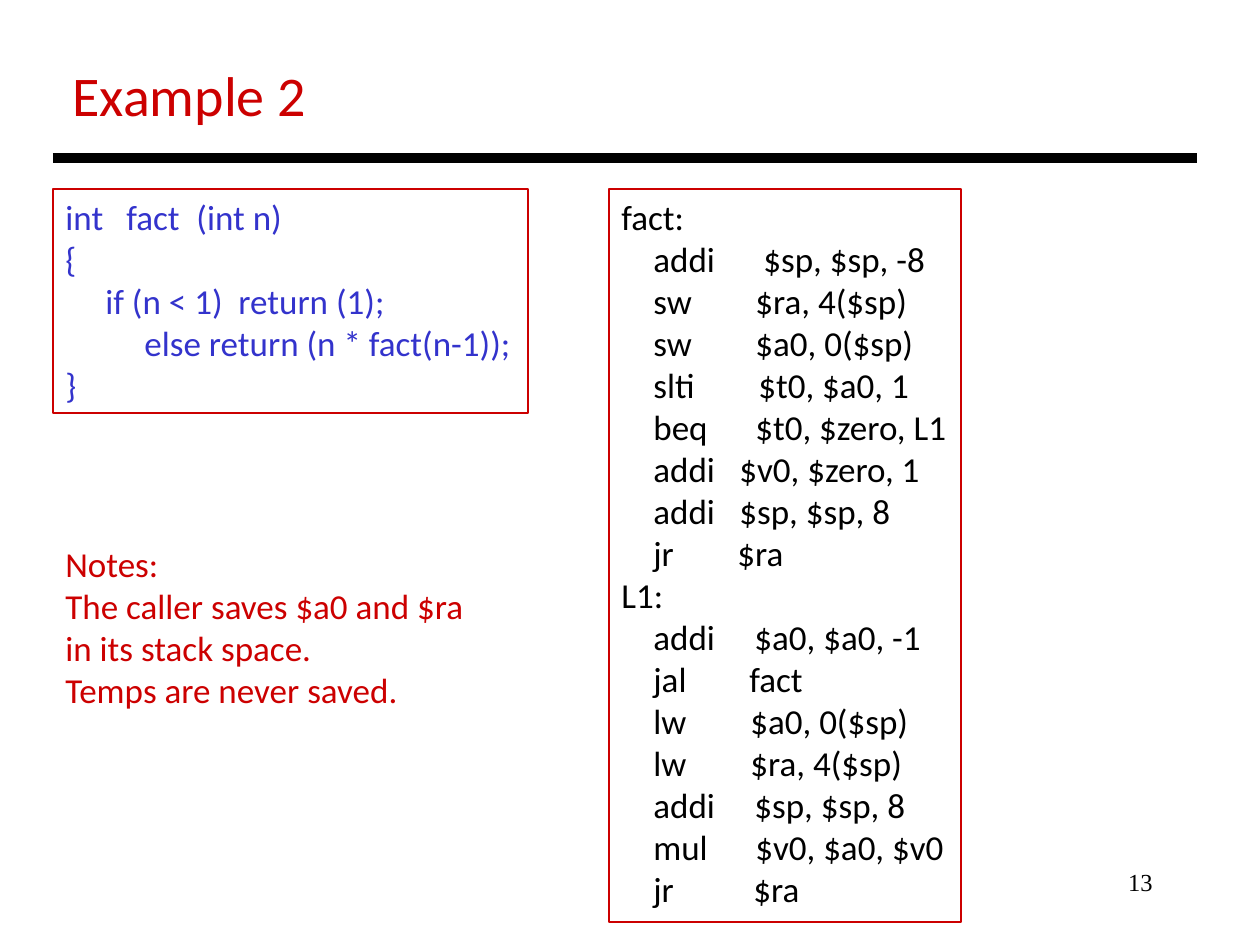
from lxml import etree
from pptx import Presentation
from pptx.dml.color import RGBColor
from pptx.enum.shapes import MSO_CONNECTOR, MSO_SHAPE
from pptx.enum.text import MSO_ANCHOR, PP_ALIGN
from pptx.oxml.ns import qn
from pptx.util import Pt

PX = 914400 / 126
RED = RGBColor(0xCC, 0x00, 0x00)
BLUE = RGBColor(0x33, 0x33, 0xCC)
BLACK = RGBColor(0x00, 0x00, 0x00)
LEFT, RIGHT = PP_ALIGN.LEFT, PP_ALIGN.RIGHT
TOP = MSO_ANCHOR.TOP
RECT = MSO_SHAPE.RECTANGLE
LINE = MSO_CONNECTOR.STRAIGHT

BODY = {"name": "Calibri", "size": Pt(20)}
HEAD = {"name": "Calibri", "size": Pt(32)}
FOOT = {"name": "Times New Roman", "size": Pt(14)}

# Each row: text, then its tab stops in px
SOURCE = [
    ("int\tfact\t(int n)", 61, 131),
    ("{",),
    ("\tif (n < 1)\treturn (1);", 40, 173),
    ("\telse return (n * fact(n-1));", 79),
    ("}",),
]
NOTES = [
    ("Notes:",),
    ("The caller saves $a0 and $ra",),
    ("in its stack space.",),
    ("Temps are never saved.",),
]
# Each step: operation, operands, px from text edge to operands
ENTRY = [
    ("addi", "$sp, $sp, -8", 142),
    ("sw", "$ra, 4($sp)", 134),
    ("sw", "$a0, 0($sp)", 134),
    ("slti", "$t0, $a0, 1", 137),
    ("beq", "$t0, $zero, L1", 134),
    ("addi", "$v0, $zero, 1", 118),
    ("addi", "$sp, $sp, 8", 118),
    ("jr", "$ra", 116),
]
CALL = [
    ("addi", "$a0, $a0, -1", 133),
    ("jal", "fact", 128),
    ("lw", "$a0, 0($sp)", 129),
    ("lw", "$ra, 4($sp)", 129),
    ("addi", "$sp, $sp, 8", 133),
    ("mul", "$v0, $a0, $v0", 134),
    ("jr", "$ra", 132),
]


def emu(*vals):
    return [round(v * PX) for v in vals]


def set_tabs(para, stops):
    if stops:
        tabs = etree.SubElement(para._p.get_or_add_pPr(), qn("a:tabLst"))
        for pos in emu(*stops):
            etree.SubElement(tabs, qn("a:tab"), pos=str(pos), algn="l")


def fill_text(shape, rows, font, color, align=LEFT):
    frame = shape.text_frame
    form = {"word_wrap": True, "vertical_anchor": TOP, "margin_right": 0}
    if align == RIGHT:
        del form["margin_right"]
    for key, val in form.items():
        setattr(frame, key, val)
    for i, (text, *stops) in enumerate(rows):
        para = frame.add_paragraph() if i else frame.paragraphs[0]
        para.alignment = align
        set_tabs(para, stops)
        run = para.add_run()
        run.text = text
        for key, val in font.items():
            setattr(run.font, key, val)
        run.font.color.rgb = color


def add_label(slide, box, rows, font, color, align=LEFT):
    shape = slide.shapes.add_textbox(*emu(*box))
    fill_text(shape, rows, font, color, align)


def add_panel(slide, box, rows, color):
    """Outlined box of code."""
    shape = slide.shapes.add_shape(RECT, *emu(*box))
    shape.shadow.inherit = False
    shape.fill.background()
    shape.line.color.rgb = RED
    shape.line.width = Pt(0.75)
    fill_text(shape, rows, BODY, color)


def add_header(slide, box):
    """Title with the heavy rule at the foot of the box."""
    x, y, w, h = box
    add_label(slide, (x + 7, y, 261, 81), [("Example 2",)], HEAD, RED)
    rule = slide.shapes.add_connector(LINE, *emu(x, y + h, x + w, y + h))
    rule.line.color.rgb = BLACK
    rule.line.width = Pt(6)
    etree.SubElement(rule._element.spPr, qn("a:effectLst"))


def label_block(name, steps):
    rows = [(f"\t{op}\t{args}", 32, stop) for op, args, stop in steps]
    return [(name,)] + rows


def main():
    deck = Presentation()
    deck.slide_width, deck.slide_height = emu(1260, 945)
    slide = deck.slides.add_slide(deck.slide_layouts[6])
    add_label(slide, (903, 861, 262, 63), [("13",)], FOOT, BLACK, RIGHT)
    add_header(slide, (53, 54, 1144, 104))
    add_panel(slide, (53, 189, 475, 224), SOURCE, BLUE)
    steps = label_block("fact:", ENTRY) + label_block("L1:", CALL)
    add_panel(slide, (609, 189, 352, 733), steps, BLACK)
    add_label(slide, (53, 536, 427, 183), NOTES, BODY, RED)
    deck.save("out.pptx")


if __name__ == "__main__":
    main()
